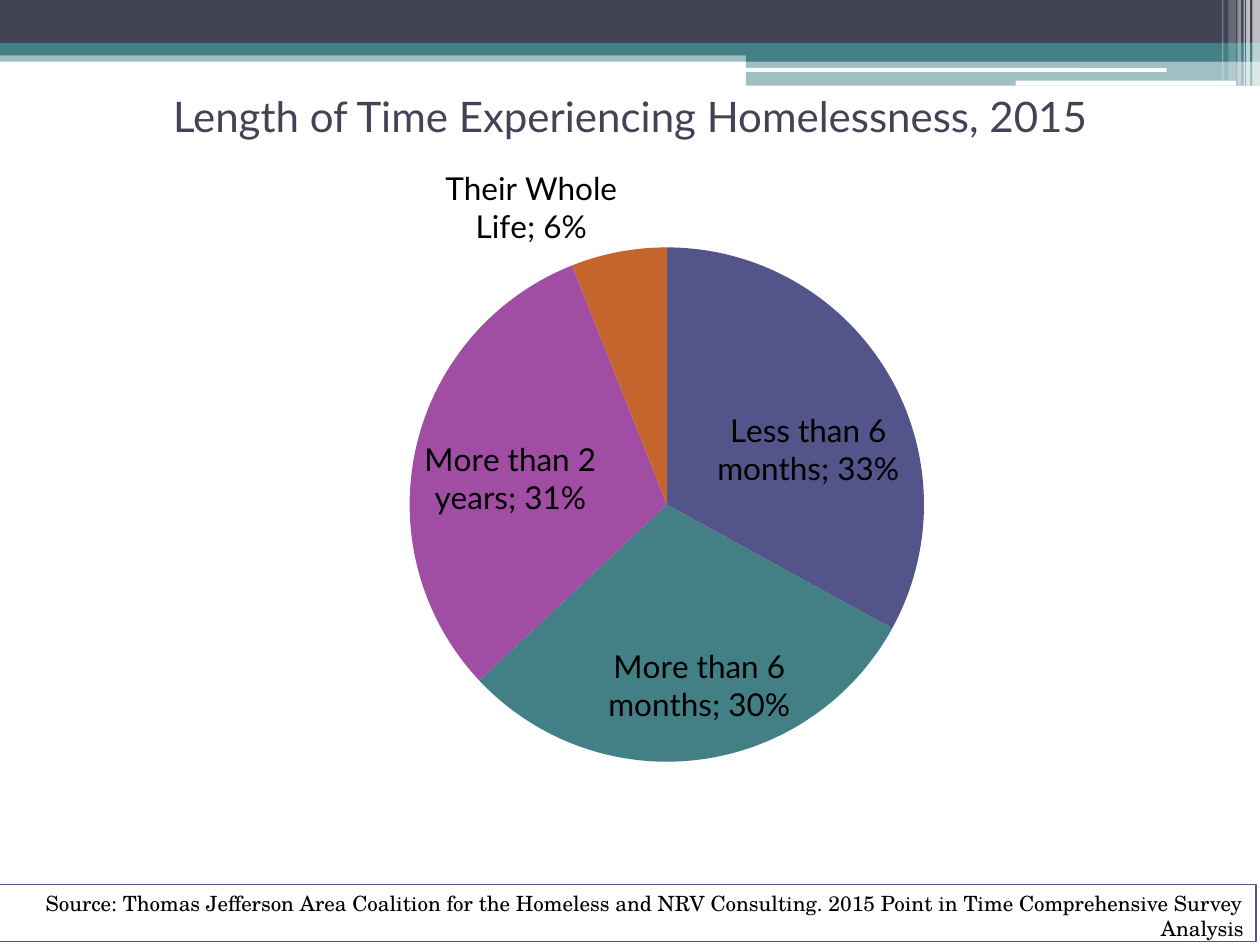
import pptx
import pptx.chart.data
import pptx.dml.color
import pptx.enum.chart
import pptx.enum.shapes
import pptx.enum.text
import pptx.oxml
import pptx.oxml.ns
import pptx.util

WIDTH, HEIGHT = 10, 7.5
INK, TEAL, INDIGO, WHITE, BLACK = "424456", "438086", "53548A", "FFFFFF", "000000"
SANS, SERIF = "Lato", "TeX Gyre Schola"
RECT = pptx.enum.shapes.MSO_SHAPE.RECTANGLE
ROUNDED = pptx.enum.shapes.MSO_SHAPE.ROUNDED_RECTANGLE

# left, top, width, height, colour, opacity in percent
HEADER_BANDS = [
    (0, 0.4, WIDTH, 0.09, TEAL, 50),
    (0, 0, WIDTH, 0.34, INK, 100),
    (0, 0.34, WIDTH, 0.1, TEAL, 100),
    (5.92, 0.39, 4.08, 0.1, TEAL, 100),
    (5.92, 0.48, 4.08, 0.2, TEAL, 50),
]
HEADER_RULES = [(5.91, 0.54, 3.35, 0.03), (8.06, 0.64, 1.75, 0.04)]
# left, width, height, opacity in percent
CORNER_STRIPES = [
    (9.94, 0.06, 0.68, 65),
    (9.89, 0.03, 0.68, 65),
    (9.87, 0.01, 0.68, 60),
    (9.82, 0.03, 0.68, 40),
    (9.75, 0.06, 0.64, 20),
    (9.7, 0.01, 0.64, 30),
]
DURATIONS = [
    ("Less than 6 months", 0.33, INDIGO),
    ("More than 6 months", 0.3, TEAL),
    ("More than 2 years", 0.31, "A04DA3"),
    ("Their Whole Life", 0.06, "C4652D"),
]


def rgb(colour):
    return pptx.dml.color.RGBColor.from_string(colour)


def inches(*lengths):
    return [pptx.util.Inches(length) for length in lengths]


def xml_element(tag, **attributes):
    element = pptx.oxml.parse_xml(f"<{tag} {pptx.oxml.ns.nsdecls(tag.split(':')[0])}/>")
    for name, value in attributes.items():
        element.set(name, str(value))
    return element


def style_font(font, face, size, colour):
    font.name, font.size = face, pptx.util.Pt(size)
    font.color.rgb = rgb(colour)


def add_block(slide, box, colour, opacity=100, kind=RECT):
    """Add a borderless filled shape; opacity is in percent."""
    block = slide.shapes.add_shape(kind, *inches(*box))
    block.shadow.inherit = False
    block.fill.solid()
    block.fill.fore_color.rgb = rgb(colour)
    block.line.fill.background()
    if opacity < 100:
        tint = block.fill._xPr.find(".//" + pptx.oxml.ns.qn("a:srgbClr"))
        tint.append(xml_element("a:alpha", val=opacity * 1000))
    return block


def write(shape, text, face, size, colour, align, anchor):
    frame = shape.text_frame
    frame.word_wrap = True
    frame.vertical_anchor = anchor
    frame.text = text
    paragraph = frame.paragraphs[0]
    paragraph.alignment = align
    style_font(paragraph.runs[0].font, face, size, colour)


def add_header(slide):
    for *box, colour, opacity in HEADER_BANDS:
        add_block(slide, box, colour, opacity)
    for box in HEADER_RULES:
        add_block(slide, box, WHITE, kind=ROUNDED)
    for left, width, height, opacity in CORNER_STRIPES:
        add_block(slide, (left, 0, width, height), WHITE, opacity)


def add_title(slide, text):
    box = slide.shapes.add_textbox(
        *inches(WIDTH / 12, 0.58, WIDTH * 10 / 12, 0.67))
    write(box, text, SANS, 24, INK, pptx.enum.text.PP_ALIGN.CENTER,
          pptx.enum.text.MSO_ANCHOR.MIDDLE)


def add_source(slide, text):
    box = add_block(slide, (-0.03, 7.02, WIDTH, 0.45), WHITE)
    box.line.color.rgb = rgb(INDIGO)
    box.line.width = pptx.util.Pt(0.75)
    write(box, text, SERIF, 12, BLACK, pptx.enum.text.PP_ALIGN.RIGHT,
          pptx.enum.text.MSO_ANCHOR.TOP)


def place_plot(chart, x, y, w, h):
    """Fix the inner plot area, in shares of the chart's size."""
    plot_area = chart._chartSpace.chart.plotArea
    for old in plot_area.findall(pptx.oxml.ns.qn("c:layout")):
        plot_area.remove(old)
    layout, manual = xml_element("c:layout"), xml_element("c:manualLayout")
    settings = dict(layoutTarget="inner", xMode="edge", yMode="edge", x=x, y=y, w=w, h=h)
    for name, value in settings.items():
        manual.append(xml_element("c:" + name, val=value))
    layout.append(manual)
    plot_area.insert(0, layout)


def label_slices(plot):
    plot.has_data_labels = True
    labels = plot.data_labels
    labels.show_category_name = labels.show_value = True
    labels.show_percentage = False
    labels.number_format, labels.number_format_is_linked = "0%", False
    labels.position = pptx.enum.chart.XL_LABEL_POSITION.BEST_FIT
    style_font(labels.font, SANS, 18, BLACK)
    separator = xml_element("c:separator")
    separator.text = "; "
    labels._element.find(pptx.oxml.ns.qn("c:showBubbleSize")).addnext(separator)


def add_duration_pie(slide):
    names, shares, colours = zip(*DURATIONS)
    data = pptx.chart.data.CategoryChartData(number_format="0%")
    data.categories = names
    data.add_series("Length of Time Experiencing Homelessness", shares)
    chart = slide.shapes.add_chart(
        pptx.enum.chart.XL_CHART_TYPE.PIE, *inches(0.92, 1.17, 8.25, 5.67), data).chart
    chart.has_title = chart.has_legend = False
    style_font(chart.font, SANS, 18, BLACK)
    place_plot(chart, 0.28, 0.14, 0.5, 0.72)
    plot = chart.plots[0]
    plot.vary_by_categories = True
    for index, colour in enumerate(colours):
        fill = plot.series[0].points[index].format.fill
        fill.solid()
        fill.fore_color.rgb = rgb(colour)
    label_slices(plot)


def main():
    deck = pptx.Presentation()
    deck.slide_width, deck.slide_height = inches(WIDTH, HEIGHT)
    slide = deck.slides.add_slide(deck.slide_layouts[6])
    add_header(slide)
    add_title(slide, "Length of Time Experiencing Homelessness, 2015")
    add_source(slide, "Source: Thomas Jefferson Area Coalition for the Homeless and "
                      "NRV Consulting. 2015 Point in Time Comprehensive Survey Analysis")
    add_duration_pie(slide)
    deck.save("out.pptx")


if __name__ == "__main__":
    main()
